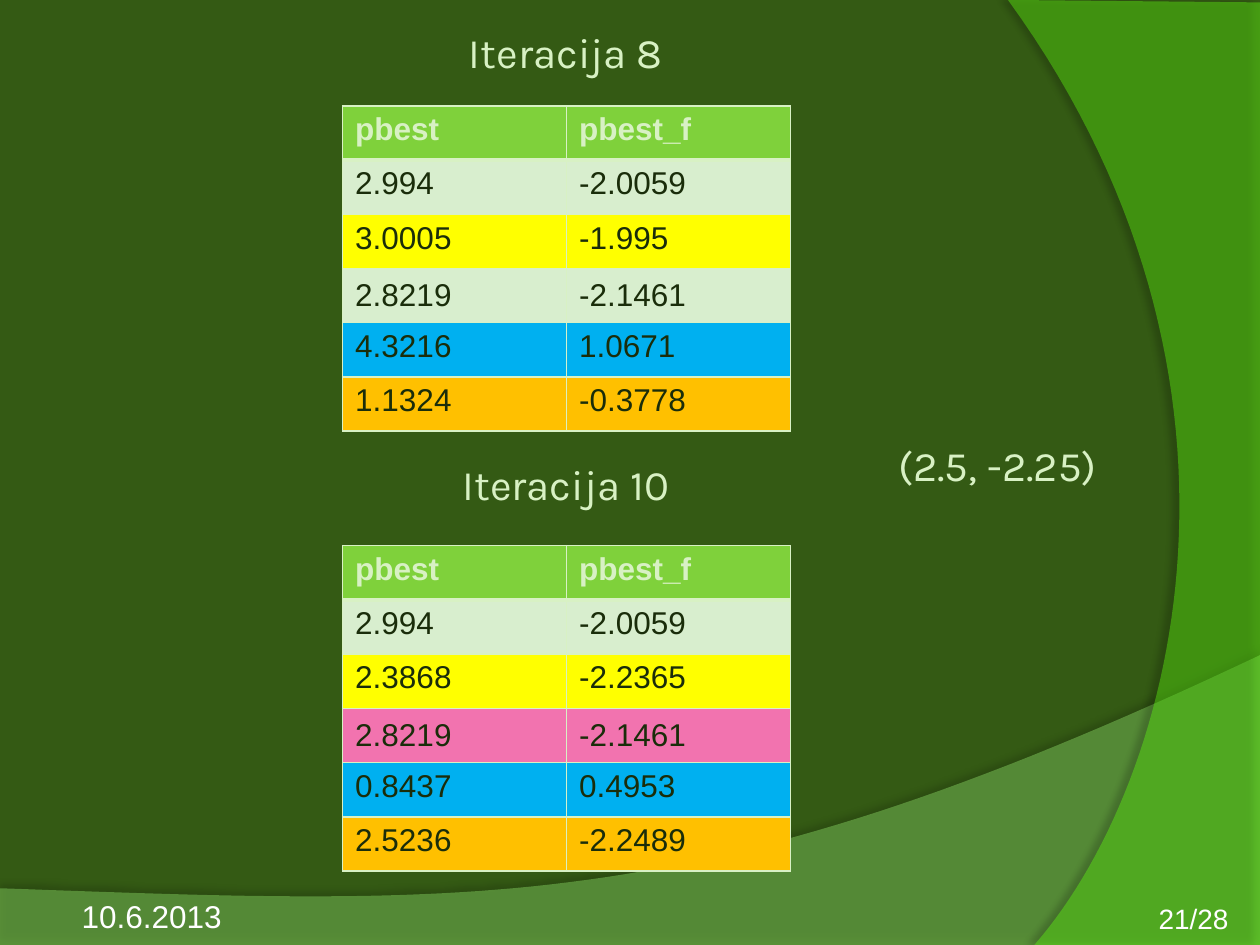
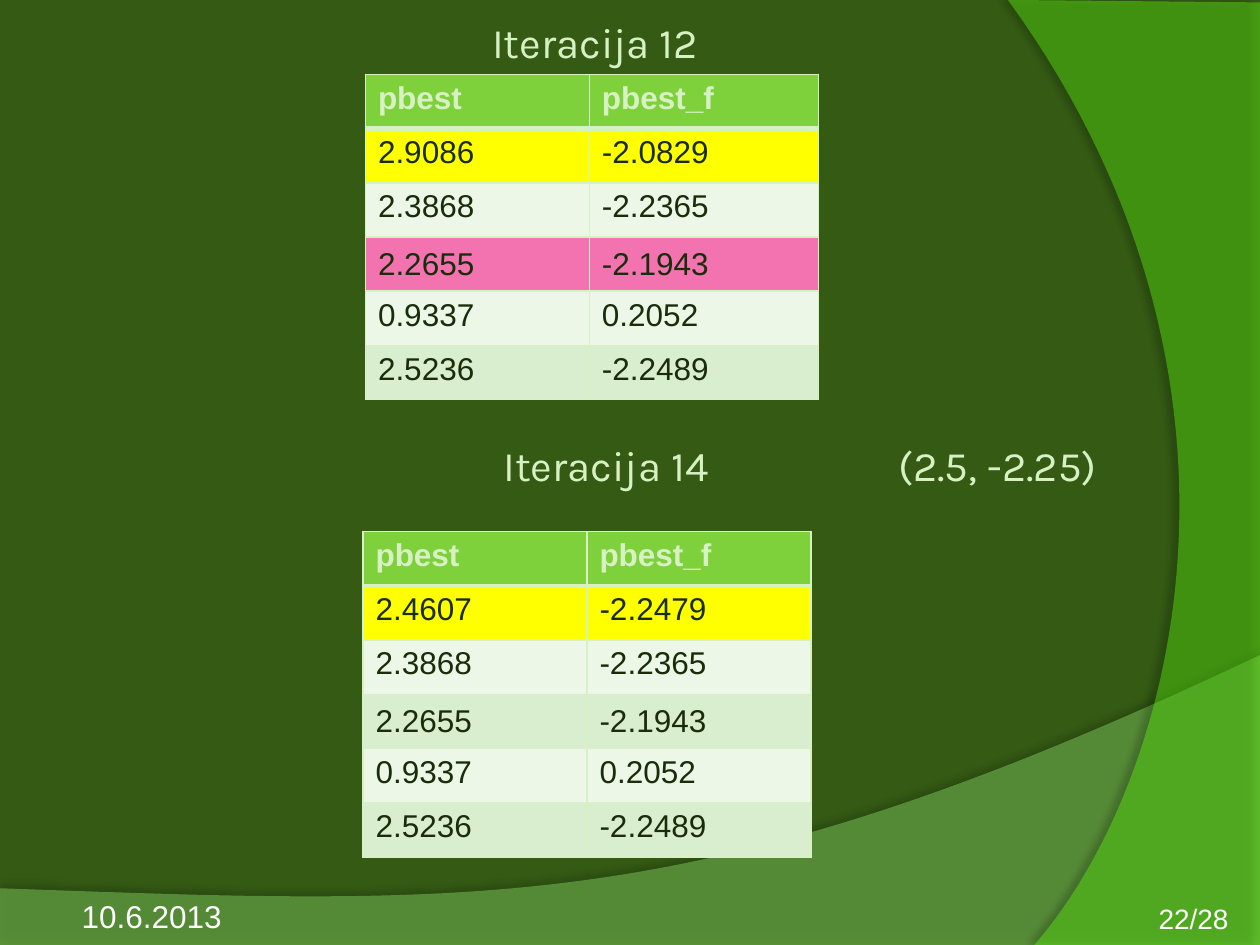
"""Builds two slides that list the particle bests of four iterations."""
from lxml import etree
from pptx import Presentation
from pptx.dml.color import RGBColor
from pptx.enum.text import MSO_ANCHOR, PP_ALIGN
from pptx.oxml import parse_xml
from pptx.oxml.ns import nsdecls, qn
from pptx.util import Pt

LEFT, CENTER, RIGHT = PP_ALIGN.LEFT, PP_ALIGN.CENTER, PP_ALIGN.RIGHT
TOP, MIDDLE, BOTTOM = MSO_ANCHOR.TOP, MSO_ANCHOR.MIDDLE, MSO_ANCHOR.BOTTOM

BACKGROUND = RGBColor(0x34, 0x5A, 0x14)
HILL = RGBColor(0x88, 0xD6, 0x65)
ARC = RGBColor(0x62, 0xFF, 0x12)
PALE = RGBColor(0xD8, 0xF1, 0xC4)
WHITE = RGBColor(0xFF, 0xFF, 0xFF)
DARK = RGBColor(0x1A, 0x2D, 0x0A)
HEADER = RGBColor(0x7F, 0xD1, 0x3B)
ODD = RGBColor(0xD8, 0xEE, 0xCE)
EVEN = RGBColor(0xEC, 0xF7, 0xE8)
YELLOW = RGBColor(0xFF, 0xFF, 0x00)
PINK = RGBColor(0xF2, 0x73, 0xAF)
BLUE = RGBColor(0x00, 0xB0, 0xF0)
ORANGE = RGBColor(0xFF, 0xC0, 0x00)

ROW_HEIGHT = 31
COLUMN_WIDTH = 128
CURVE_STEPS = 60

# fill, opacity, corners, curve control points, shadow opacity, shadow distance, shadow angle
BANDS = [
    (HILL, 45, [(0, 507.6), (0, 540), (720, 540), (720, 374.4)],
     [(720, 374.4), (402.5, 524.9), (281.5, 517.7), (0, 507.6)], 35, 3.5, 270),
    (ARC, 40, [(720, 1.4), (720, 540), (591.1, 540)],
     [(591.1, 540), (673.2, 445.7), (733, 216), (576, 0)], 45, 4, 180),
]

# title, title left and top, table left and top, last column width, rows
PAGES = [
    ("21/28", [
        ("Iteracija 8", 140.4, 11.5, 195.8, 60.5, COLUMN_WIDTH, [
            ("2.994", "-2.0059", ODD), ("3.0005", "-1.995", YELLOW),
            ("2.8219", "-2.1461", ODD), ("4.3216", "1.0671", BLUE),
            ("1.1324", "-0.3778", ORANGE)]),
        ("Iteracija 10", 140.4, 258.5, 195.8, 311.8, COLUMN_WIDTH, [
            ("2.994", "-2.0059", ODD), ("2.3868", "-2.2365", YELLOW),
            ("2.8219", "-2.1461", PINK), ("0.8437", "0.4953", BLUE),
            ("2.5236", "-2.2489", ORANGE)]),
    ]),
    ("22/28", [
        ("Iteracija 12", 157.2, 5.8, 208.8, 42.5, 131, [
            ("2.9086", "-2.0829", YELLOW), ("2.3868", "-2.2365", EVEN),
            ("2.2655", "-2.1943", PINK), ("0.9337", "0.2052", EVEN),
            ("2.5236", "-2.2489", ODD)]),
        ("Iteracija 14", 163.4, 247.7, 207.4, 303.8, COLUMN_WIDTH, [
            ("2.4607", "-2.2479", YELLOW), ("2.3868", "-2.2365", EVEN),
            ("2.2655", "-2.1943", ODD), ("0.9337", "0.2052", EVEN),
            ("2.5236", "-2.2489", ODD)]),
    ]),
]


def write_text(frame, text, size=18, font="Arial", color=WHITE, bold=False, align=LEFT):
    para = frame.paragraphs[0]
    para.alignment = align
    span = para.add_run()
    span.text = text
    span.font.size = Pt(size)
    span.font.name = font
    span.font.bold = bold
    span.font.color.rgb = color


def add_frame(page, left, top, width, height, anchor=TOP, wrap=True):
    box = page.shapes.add_textbox(Pt(left), Pt(top), Pt(width), Pt(height))
    frame = box.text_frame
    frame.word_wrap = wrap
    frame.vertical_anchor = anchor
    return frame


deck = Presentation()
deck.slide_width, deck.slide_height = Pt(720), Pt(540)

for page_number, iterations in PAGES:
    page = deck.slides.add_slide(deck.slide_layouts[6])
    page.background.fill.solid()
    page.background.fill.fore_color.rgb = BACKGROUND

    for color, opacity, corners, controls, shade, distance, angle in BANDS:
        outline = list(corners)
        for step in range(1, CURVE_STEPS + 1):
            t = step / CURVE_STEPS
            weights = ((1 - t) ** 3, 3 * t * (1 - t) ** 2, 3 * t ** 2 * (1 - t), t ** 3)
            outline.append([sum(w * point[axis] for w, point in zip(weights, controls))
                            for axis in (0, 1)])
        points = [(Pt(x), Pt(y)) for x, y in outline]
        builder = page.shapes.build_freeform(*points[0])
        builder.add_line_segments(points[1:], close=True)
        band = builder.convert_to_shape()
        band.line.fill.background()
        band.fill.solid()
        band.fill.fore_color.rgb = color
        tint = band.fill._xPr.find(qn("a:solidFill"))[0]
        etree.SubElement(tint, qn("a:alpha"), val=str(opacity * 1000))
        band._element.spPr.append(parse_xml(
            f'<a:effectLst {nsdecls("a")}><a:outerShdw blurRad="{Pt(4)}" '
            f'dist="{Pt(distance)}" dir="{angle * 60000}" algn="ctr" rotWithShape="0">'
            f'<a:srgbClr val="000000"><a:alpha val="{shade * 1000}"/></a:srgbClr>'
            '</a:outerShdw></a:effectLst>'))

    date = add_frame(page, 39.6, 506.2, 167.8, 28, anchor=BOTTOM)
    date.margin_bottom = 0
    write_text(date, "10.6.2013")
    number = add_frame(page, 642.2, 505.4, 59.8, 28.8, anchor=BOTTOM)
    number.margin_left = number.margin_right = number.margin_top = number.margin_bottom = 0
    write_text(number, page_number, size=16, align=RIGHT)

    for title, title_left, title_top, left, top, last_width, rows in iterations:
        heading = add_frame(page, title_left, title_top, 365.8, 36)
        write_text(heading, title, size=24, font="Karla", color=PALE, align=CENTER)

        lines = [("pbest", "pbest_f", HEADER)] + rows
        table = page.shapes.add_table(
            len(lines), 2, Pt(left), Pt(top),
            Pt(COLUMN_WIDTH + last_width), Pt(ROW_HEIGHT * len(lines))).table
        table.columns[0].width = Pt(COLUMN_WIDTH)
        table.columns[1].width = Pt(last_width)
        for row, (*values, fill) in enumerate(lines):
            table.rows[row].height = Pt(ROW_HEIGHT)
            widths = {"L": 1, "R": 1, "T": 3 if row == 1 else 1, "B": 3 if row == 0 else 1}
            for column, value in enumerate(values):
                cell = table.cell(row, column)
                cell.fill.solid()
                cell.fill.fore_color.rgb = fill
                cell.vertical_anchor = MIDDLE if row == 3 else TOP
                write_text(cell.text_frame, value, color=DARK if row else PALE, bold=row == 0)
                for place, (side, width) in enumerate(widths.items()):
                    cell._tc.get_or_add_tcPr().insert(place, parse_xml(
                        f'<a:ln{side} {nsdecls("a")} w="{Pt(width)}"><a:solidFill>'
                        f'<a:srgbClr val="{PALE}"/></a:solidFill></a:ln{side}>'))

    optimum = add_frame(page, 506.2, 247.7, 167, 36, wrap=False)
    write_text(optimum, "(2.5, -2.25)", size=24, font="Karla", color=PALE)

deck.save("out.pptx")
